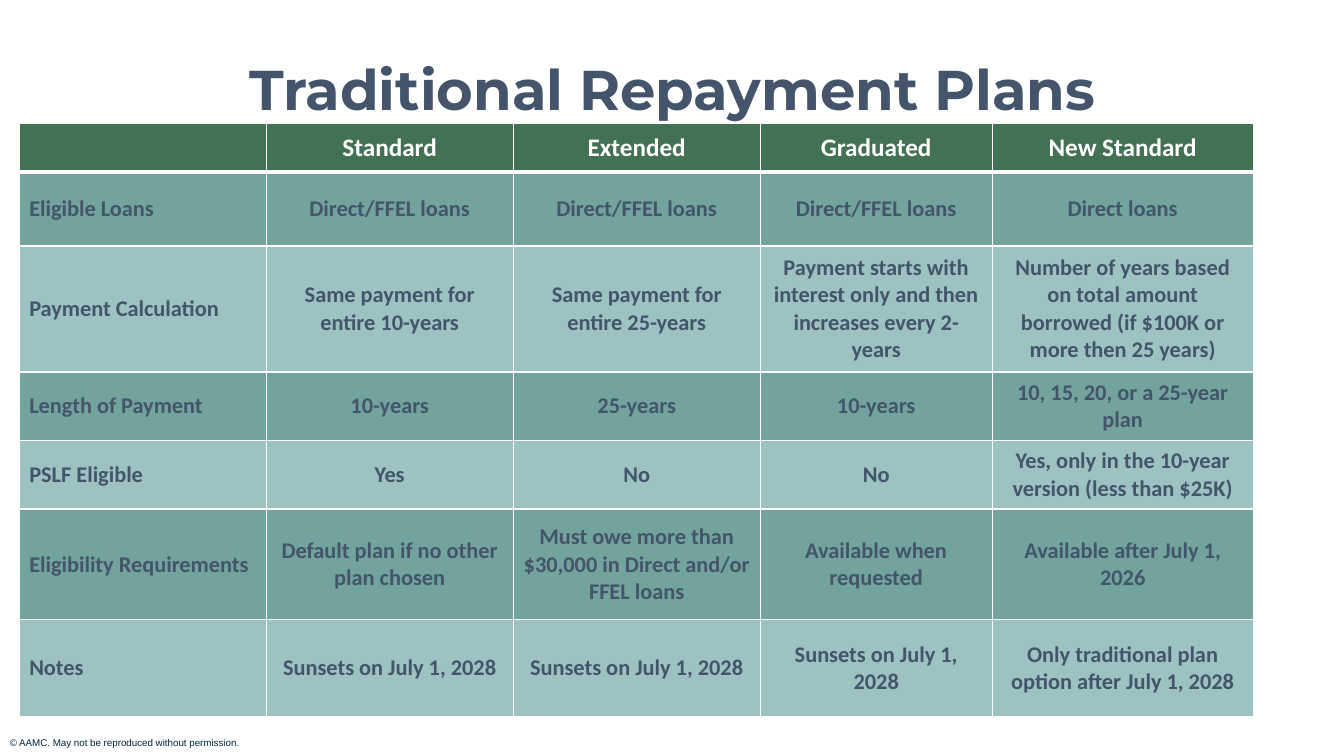
import pptx
import pptx.util
import pptx.dml.color
import pptx.enum.text
from lxml import etree

Inches, Pt = pptx.util.Inches, pptx.util.Pt
ALIGN = pptx.enum.text.PP_ALIGN
ANCHOR = pptx.enum.text.MSO_ANCHOR
NS = "http://schemas.openxmlformats.org/drawingml/2006/main"

COLORS = {
    "white": "FFFFFF",
    "slate": "44546A",
    "navy": "002641",
    "green": "437154",
    "teal": "72A39D",
    "mist": "9CC3C2",
}


def style(para, face, size, color, bold=False):
    para.font.name = face
    para.font.size = Pt(size)
    para.font.bold = bold
    para.font.color.rgb = pptx.dml.color.RGBColor.from_string(COLORS[color])


def edge(cell, side, width):
    """Draw a white border on one side (L, R, T or B) of a cell."""
    props = cell._tc.get_or_add_tcPr()
    line = etree.SubElement(props, f"{{{NS}}}ln{side}", w=str(Pt(width)))
    fill = etree.SubElement(line, f"{{{NS}}}solidFill")
    etree.SubElement(fill, f"{{{NS}}}srgbClr", val=COLORS["white"])


deck = pptx.Presentation()
deck.slide_width = Inches(13.33)
deck.slide_height = Inches(7.5)
slide = deck.slides.add_slide(deck.slide_layouts[6])

# Footer and title
foot = slide.shapes.add_textbox(Inches(0), Inches(7.26), Inches(2.9), Inches(0.22))
foot.text_frame.word_wrap = True
foot.text_frame.text = "© AAMC. May not be reproduced without permission."
style(foot.text_frame.paragraphs[0], "Arial", 7, "navy")

title = slide.shapes.add_textbox(Inches(0.92), Inches(0.53), Inches(11.5), Inches(0.77))
title.text_frame.word_wrap = True
title.text_frame.vertical_anchor = ANCHOR.MIDDLE
title.text_frame.text = "Traditional Repayment Plans"
head = title.text_frame.paragraphs[0]
head.alignment = ALIGN.CENTER
head.line_spacing = 0.9
style(head, "Montserrat", 40, "slate", True)

# Plan table
plans = [
    ["", "Standard", "Extended", "Graduated", "New Standard"],
    ["Eligible Loans", "Direct/FFEL loans", "Direct/FFEL loans",
     "Direct/FFEL loans", "Direct loans"],
    ["Payment Calculation", "Same payment for entire 10-years",
     "Same payment for entire 25-years",
     "Payment starts with interest only and then increases every 2-years",
     "Number of years based on total amount borrowed (if $100K or more then 25 years)"],
    ["Length of Payment", "10-years", "25-years", "10-years",
     "10, 15, 20, or a 25-year plan"],
    ["PSLF Eligible", "Yes", "No", "No",
     "Yes, only in the 10-year version (less than $25K)"],
    ["Eligibility Requirements", "Default plan if no other plan chosen",
     "Must owe more than $30,000 in Direct and/or FFEL loans",
     "Available when requested", "Available after July 1, 2026"],
    ["Notes", "Sunsets on July 1, 2028", "Sunsets on July 1, 2028",
     "Sunsets on July 1, 2028", "Only traditional plan option after July 1, 2028"],
]
widths = [2.45, 2.45, 2.45, 2.3, 2.59]
heights = [0.49, 0.73, 1.25, 0.68, 0.68, 1.1, 0.96]

table = slide.shapes.add_table(
    len(heights), len(widths), Inches(0.19), Inches(1.22),
    Inches(sum(widths)), Inches(sum(heights))).table
for col, width in zip(table.columns, widths):
    col.width = Inches(width)

for r, (texts, height) in enumerate(zip(plans, heights)):
    table.rows[r].height = Inches(height)
    if r == 0:
        shade, size, ink = "green", 18, "white"
    else:
        shade, size, ink = ("teal" if r % 2 else "mist"), 16, "slate"
    for c, text in enumerate(texts):
        cell = table.cell(r, c)
        cell.text = text
        cell.vertical_anchor = ANCHOR.MIDDLE
        for side in "LRTB":
            thick = (r == 0 and side == "B") or (r == 1 and side == "T")
            edge(cell, side, 3 if thick else 1)
        cell.fill.solid()
        cell.fill.fore_color.rgb = pptx.dml.color.RGBColor.from_string(COLORS[shade])
        para = cell.text_frame.paragraphs[0]
        para.alignment = ALIGN.CENTER if c else ALIGN.LEFT
        style(para, "Calibri", size, ink, True)

deck.save("out.pptx")
